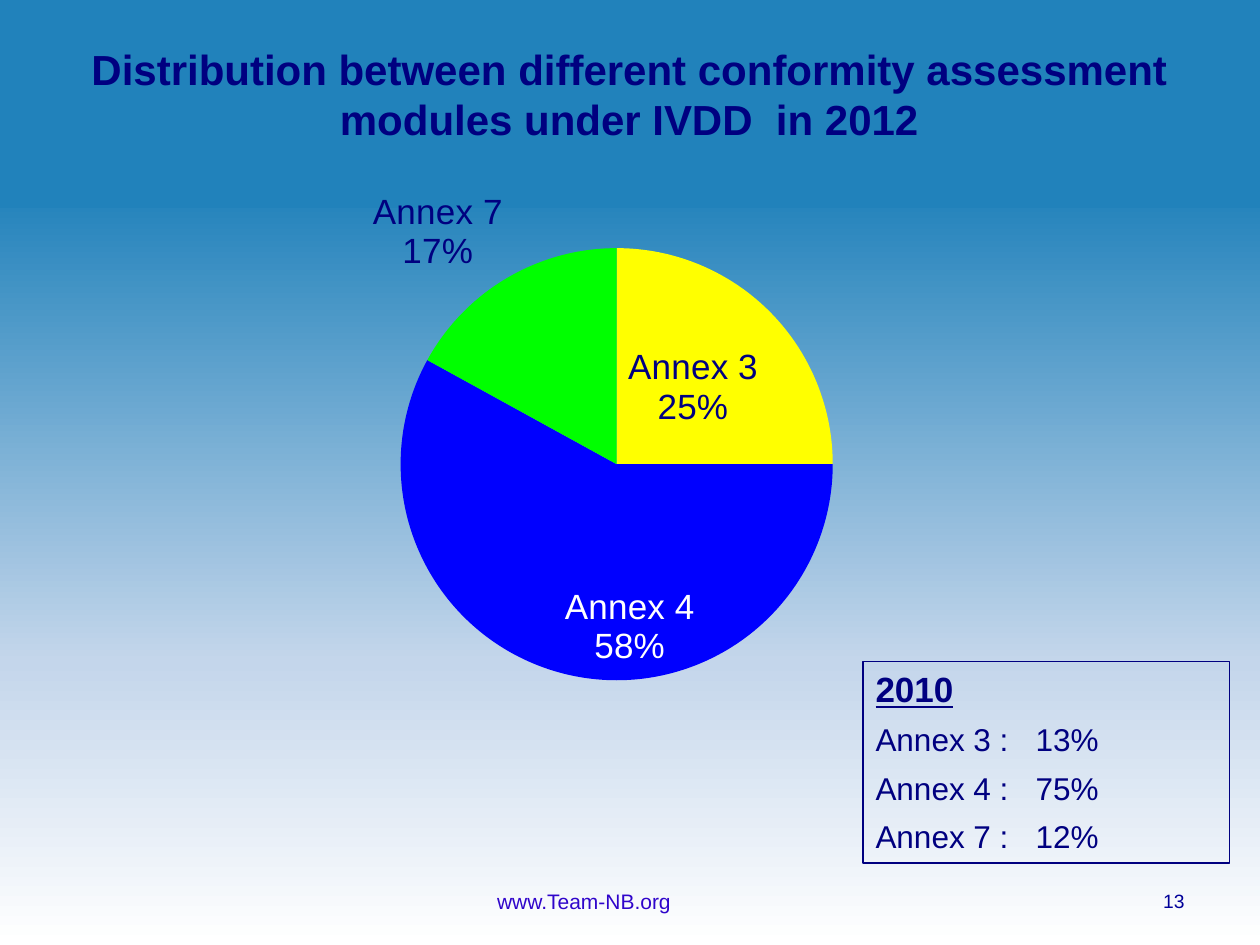
from dataclasses import dataclass

import pptx
import pptx.chart.data
import pptx.dml.color
import pptx.enum.chart
import pptx.enum.shapes
import pptx.enum.text
import pptx.oxml
import pptx.oxml.ns
import pptx.util
from pptx.util import Inches

FONT = "Arial"
NAVY = "000080"
ALIGN = pptx.enum.text.PP_ALIGN
ANCHOR = pptx.enum.text.MSO_ANCHOR
LABEL = pptx.enum.chart.XL_LABEL_POSITION


@dataclass
class Area:
    left: float
    top: float
    width: float
    height: float

    def lengths(self) -> tuple:
        return tuple(map(Inches, (self.left, self.top, self.width, self.height)))


@dataclass
class Caption:
    area: Area
    text: str
    size: float
    color: str
    align: ALIGN
    bold: bool = False


@dataclass
class Slice:
    name: str
    percent: int
    color: str
    label_color: str
    label_position: LABEL


CAPTIONS = [
    Caption(Area(0.43, 0.29, 9.13, 0.91),
            "Distribution between different conformity assessment modules under IVDD  in 2012",
            24, NAVY, ALIGN.CENTER, True),
    Caption(Area(3.05, 6.95, 3.17, 0.4), "www.Team-NB.org", 12, "2F05CB", ALIGN.CENTER),
    Caption(Area(7.17, 6.95, 2.33, 0.4), "13", 11, "000099", ALIGN.RIGHT),
]
SLICES = [
    Slice("Annex 3", 25, "FFFF00", NAVY, LABEL.CENTER),
    Slice("Annex 4", 58, "0000FF", "FFFFFF", LABEL.INSIDE_END),
    Slice("Annex 7", 17, "00FF00", NAVY, LABEL.OUTSIDE_END),
]
EARLIER_SHARES = {"Annex 3": 13, "Annex 4": 75, "Annex 7": 12}
GRADIENT = {20: "2182BB", 70: "C4D6EB", 100: "FFFFFF"}


def rgb(color: str) -> pptx.dml.color.RGBColor:
    return pptx.dml.color.RGBColor.from_string(color)


def xml(prefix: str, markup: str):
    name, rest = markup.split(" ", 1)
    namespace = pptx.oxml.ns.nsdecls(*dict.fromkeys((prefix, "a")))
    return pptx.oxml.parse_xml(f"<{prefix}:{name} {namespace} {rest}")


def style(font, size: float, color: str, bold: bool = False) -> None:
    font.name = FONT
    font.size = pptx.util.Pt(size)
    font.bold = bold
    font.color.rgb = rgb(color)


def paint_background(page) -> None:
    fill = page.background.fill
    fill.gradient()
    fill.gradient_angle = 270
    stops = page.element.xpath(".//a:gsLst")[0]
    for stop in list(stops):
        stops.remove(stop)
    for percent, color in GRADIENT.items():
        stops.append(xml("a", f'gs pos="{percent * 1000}"><a:srgbClr val="{color}"/></a:gs>'))


def add_rectangle(page, area: Area, line_color: str, line_width: float):
    box = page.shapes.add_shape(pptx.enum.shapes.MSO_SHAPE.RECTANGLE, *area.lengths())
    box.shadow.inherit = False
    box.fill.background()
    box.line.color.rgb = rgb(line_color)
    box.line.width = pptx.util.Pt(line_width)
    return box


def add_caption(page, caption: Caption) -> None:
    frame = page.shapes.add_textbox(*caption.area.lengths()).text_frame
    frame.word_wrap = True
    frame.vertical_anchor = ANCHOR.MIDDLE
    frame.text = caption.text
    para = frame.paragraphs[0]
    para.alignment = caption.align
    style(para.runs[0].font, caption.size, caption.color, caption.bold)


def add_pie(page, area: Area, slices: list[Slice]) -> None:
    data = pptx.chart.data.CategoryChartData()
    data.categories = [part.name for part in slices]
    data.add_series("Series 1", [part.percent for part in slices])
    chart = page.shapes.add_chart(
        pptx.enum.chart.XL_CHART_TYPE.PIE, *area.lengths(), data).chart
    chart.has_legend = False
    chart.has_title = False
    style(chart.font, 20, NAVY)
    plot = chart.plots[0]
    plot.vary_by_categories = True
    series = plot.series[0]
    for index, part in enumerate(slices):
        point = series.points[index]
        point.format.fill.solid()
        point.format.fill.fore_color.rgb = rgb(part.color)
        point.format.line.fill.background()
        style(point.data_label.font, 20, part.label_color)
        point.data_label.position = part.label_position

    root = chart.element
    for label in root.xpath(".//c:dLbl"):
        label.xpath("./c:idx")[0].addnext(
            xml("c", 'numFmt formatCode="0%" sourceLinked="0"/>'))
        for name, shown in (("showVal", "0"), ("showCatName", "1"), ("showPercent", "1")):
            label.xpath(f"./c:{name}")[0].set("val", shown)
        label.append(xml("c", "separator >\n</c:separator>"))

    diameter, left, top = 3.43, 3.18, 1.97
    layout = {
        "x": (left - area.left) / area.width,
        "y": (top - area.top) / area.height,
        "w": diameter / area.width,
        "h": diameter / area.height,
    }
    modes = '<c:layoutTarget val="inner"/><c:xMode val="edge"/><c:yMode val="edge"/>'
    sizes = "".join(f'<c:{key} val="{value:.4f}"/>' for key, value in layout.items())
    plot_area = root.xpath(".//c:plotArea")[0]
    for previous in plot_area.xpath("./c:layout"):
        plot_area.remove(previous)
    plot_area.insert(0, xml(
        "c", f"layout ><c:manualLayout>{modes}{sizes}</c:manualLayout></c:layout>"))


def add_earlier_shares(page, area: Area, year: str, shares: dict[str, int]) -> None:
    frame = add_rectangle(page, area, NAVY, 0.75).text_frame
    frame.word_wrap = True
    frame.vertical_anchor = ANCHOR.TOP
    frame.text = "\n".join(
        [year] + [f"{name} :\t{percent}%" for name, percent in shares.items()])
    for index, para in enumerate(frame.paragraphs):
        heading = index == 0
        para._p.get_or_add_pPr().append(xml(
            "a", f'tabLst ><a:tab pos="{Inches(1.27)}" algn="l"/></a:tabLst>'))
        para.alignment = ALIGN.LEFT
        para.space_before = pptx.util.Pt(0 if heading else 3)
        para.space_after = pptx.util.Pt(3)
        for span in para.runs:
            style(span.font, 20 if heading else 18, NAVY, heading)
            span.font.underline = heading


def main() -> None:
    deck = pptx.Presentation()
    deck.slide_width, deck.slide_height = Inches(10), Inches(7.5)
    page = deck.slides.add_slide(deck.slide_layouts[6])
    paint_background(page)
    band = add_rectangle(page, Area(0, 0, 10, 1.64), "2182BB", 2)
    band.fill.solid()
    band.fill.fore_color.rgb = rgb("2182BB")
    add_pie(page, Area(0.43, 1.31, 9.13, 4.88), SLICES)
    for caption in CAPTIONS:
        add_caption(page, caption)
    add_earlier_shares(page, Area(6.85, 5.25, 2.91, 1.6), "2010", EARLIER_SHARES)
    deck.save("out.pptx")


if __name__ == "__main__":
    main()
